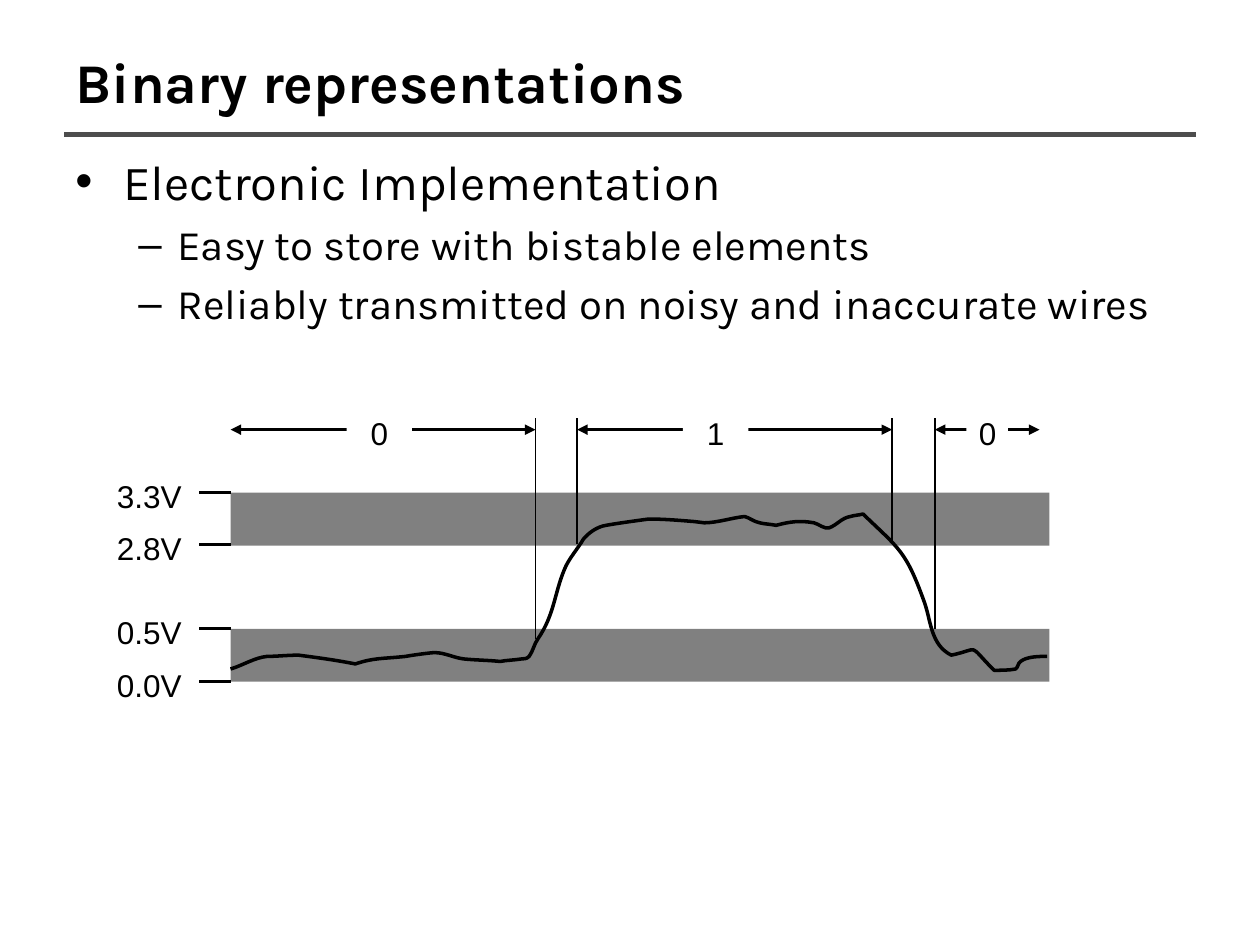
from pptx import Presentation
from pptx.dml.color import RGBColor
from pptx.enum.shapes import MSO_CONNECTOR, MSO_SHAPE
from pptx.enum.text import MSO_ANCHOR, PP_ALIGN
from pptx.oxml.ns import qn
from pptx.util import Inches, Pt
from lxml import etree

LINE, RECT = MSO_CONNECTOR.STRAIGHT, MSO_SHAPE.RECTANGLE
TOP, MIDDLE, CENTER = MSO_ANCHOR.TOP, MSO_ANCHOR.MIDDLE, PP_ALIGN.CENTER
COLORS = {"ink": "000000", "rule": "4D4D4D", "band": "808080", "paper": "FFFFFF"}

HEAD = {"name": "Karla", "size": Pt(32), "bold": True}
LABEL = {"name": "Arial", "size": Pt(18)}
LEVELS = [
    {"bullet": "•", "left": 0.38, "hang": 0.38, "size": 28},
    {"bullet": "–", "left": 0.81, "hang": 0.31, "size": 24},
]
BULLETS = [
    (0, "Electronic Implementation"),
    (1, "Easy to store with bistable elements"),
    (1, "Reliably transmitted on noisy and inaccurate wires"),
]

# Heights below the 3.3V line, by voltage
VOLTS = {"3.3V": 0, "2.8V": 0.41, "0.5V": 1.08, "0.0V": 1.5}
# Digit, span start and end, digit box start and width
SPANS = [
    ("0", 0, 2.42, 0.92, 0.52),
    ("1", 2.75, 5.25, 3.59, 0.52),
    ("0", 5.59, 6.42, 5.84, 0.33),
]
# Place and foot of each upright marker
MARKS = [(2.42, 1.16), (2.75, 0.41), (5.25, 0.41), (5.59, 1.08)]

# Signal in hundredths of an inch: two controls and an end for each curve
START = (183, 531)
CURVES = [
    (193, 528, 202, 522, 212, 521), (220, 521, 228, 520, 237, 520),
    (252, 522, 267, 524, 282, 527), (297, 522, 303, 523, 322, 521),
    (327, 520, 342, 518, 345, 518), (353, 518, 360, 522, 368, 523),
    (378, 524, 387, 524, 397, 525), (402, 524, 408, 524, 414, 523),
    (416, 523, 418, 523, 420, 521), (423, 517, 424, 511, 427, 507),
    (440, 488, 440, 471, 448, 452), (451, 444, 459, 435, 463, 428),
    (467, 423, 474, 418, 481, 417), (492, 415, 515, 412, 515, 412),
    (527, 412, 539, 413, 551, 414), (554, 414, 556, 415, 559, 415),
    (569, 415, 581, 411, 591, 410), (595, 411, 598, 414, 603, 415),
    (607, 416, 611, 416, 616, 417), (627, 414, 635, 413, 646, 415),
    (650, 416, 654, 420, 658, 419), (664, 417, 668, 411, 675, 410),
    (678, 409, 681, 409, 685, 408), (714, 436, 719, 437, 734, 479),
    (739, 494, 739, 512, 755, 520), (779, 515, 767, 510, 789, 532),
    (795, 532, 801, 532, 806, 531), (808, 530, 808, 526, 810, 525),
    (815, 521, 825, 521, 831, 521),
]


def rgb(name):
    return RGBColor.from_string(COLORS[name])


def style(para, text, form):
    para.text = text
    for key, value in form.items():
        setattr(para.font, key, value)
    para.font.color.rgb = rgb("ink")


def add_line(slide, x1, y1, x2, y2, width, color="ink", arrows=False):
    line = slide.shapes.add_connector(LINE, *map(Inches, (x1, y1, x2, y2)))
    line.line.width = Pt(width)
    line.line.color.rgb = rgb(color)
    props = line.line._get_or_add_ln()
    if arrows:
        for tag in ("a:headEnd", "a:tailEnd"):
            etree.SubElement(props, qn(tag), type="triangle")
    etree.SubElement(line._element.spPr, qn("a:effectLst"))


def add_text(slide, box, wrap=True):
    frame = slide.shapes.add_textbox(*map(Inches, box)).text_frame
    frame.word_wrap = wrap
    return frame


def add_rect(slide, box, color):
    rect = slide.shapes.add_shape(RECT, *map(Inches, box))
    rect.shadow.inherit = False
    rect.fill.solid()
    rect.fill.fore_color.rgb = rgb(color)
    rect.line.fill.background()
    return rect


def add_title(slide, box):
    frame = add_text(slide, box)
    frame.vertical_anchor = MIDDLE
    style(frame.paragraphs[0], "Binary representations", HEAD)
    add_line(slide, 0.51, 1.07, 9.49, 1.07, 3, "rule")


def add_body(slide, box):
    frame = add_text(slide, box)
    for i, (level, text) in enumerate(BULLETS):
        para = frame.add_paragraph() if i else frame.paragraphs[0]
        look = LEVELS[level]
        para.level = level
        if i:
            para.space_before = Pt(5)
        props = para._p.get_or_add_pPr()
        props.set("marL", str(Inches(look["left"])))
        props.set("indent", str(-Inches(look["hang"])))
        etree.SubElement(props, qn("a:buFont"), typeface="Arial")
        etree.SubElement(props, qn("a:buChar"), char=look["bullet"])
        style(para, text, {"name": "Karla", "size": Pt(look["size"])})


def add_signal(slide):
    """Draw the signal through its curve ends, then bend each segment."""
    ends = [curve[4:] for curve in CURVES]
    path = slide.shapes.build_freeform(*START, scale=Inches(0.01))
    path.add_line_segments(ends, close=False)
    wave = path.convert_to_shape()
    wave.shadow.inherit = False
    wave.fill.background()
    wave.line.width = Pt(2)
    wave.line.color.rgb = rgb("ink")
    left, top = (min(axis) for axis in zip(START, *ends))
    parts = list(wave._element.iter(qn("a:lnTo")))
    for part, curve in zip(parts, CURVES):
        bend = etree.Element(qn("a:cubicBezTo"))
        for x, y in zip(curve[::2], curve[1::2]):
            etree.SubElement(bend, qn("a:pt"), x=str(x - left), y=str(y - top))
        part.getparent().replace(part, bend)


def add_graph(slide, left, top, width):
    for volt in ("0.5V", "3.3V"):
        add_rect(slide, (left, top + VOLTS[volt], width, 0.42), "band")
    add_signal(slide)
    for text, drop in VOLTS.items():
        y = top + drop
        add_line(slide, left, y, left - 0.25, y, 2)
        frame = add_text(slide, (left - 1, y - 0.17, 0.72, 0.4), wrap=False)
        style(frame.paragraphs[0], text, LABEL)
    for text, start, end, box, wide in SPANS:
        y = top - 0.5
        add_line(slide, left + start, y, left + end, y, 2, arrows=True)
        rect = add_rect(slide, (left + box, y - 0.17, wide, 0.4), "paper")
        rect.text_frame.vertical_anchor = TOP
        para = rect.text_frame.paragraphs[0]
        para.alignment = CENTER
        style(para, text, LABEL)
    for x, foot in MARKS:
        add_line(slide, left + x, top - 0.59, left + x, top + foot, 1)


def main():
    deck = Presentation()
    deck.slide_width, deck.slide_height = Inches(10), Inches(7.5)
    slide = deck.slides.add_slide(deck.slide_layouts[6])
    add_title(slide, (0.5, 0.3, 8.12, 0.69))
    add_body(slide, (0.5, 1.15, 9, 5.98))
    add_graph(slide, 1.83, 3.91, 6.5)
    deck.save("out.pptx")


if __name__ == "__main__":
    main()
